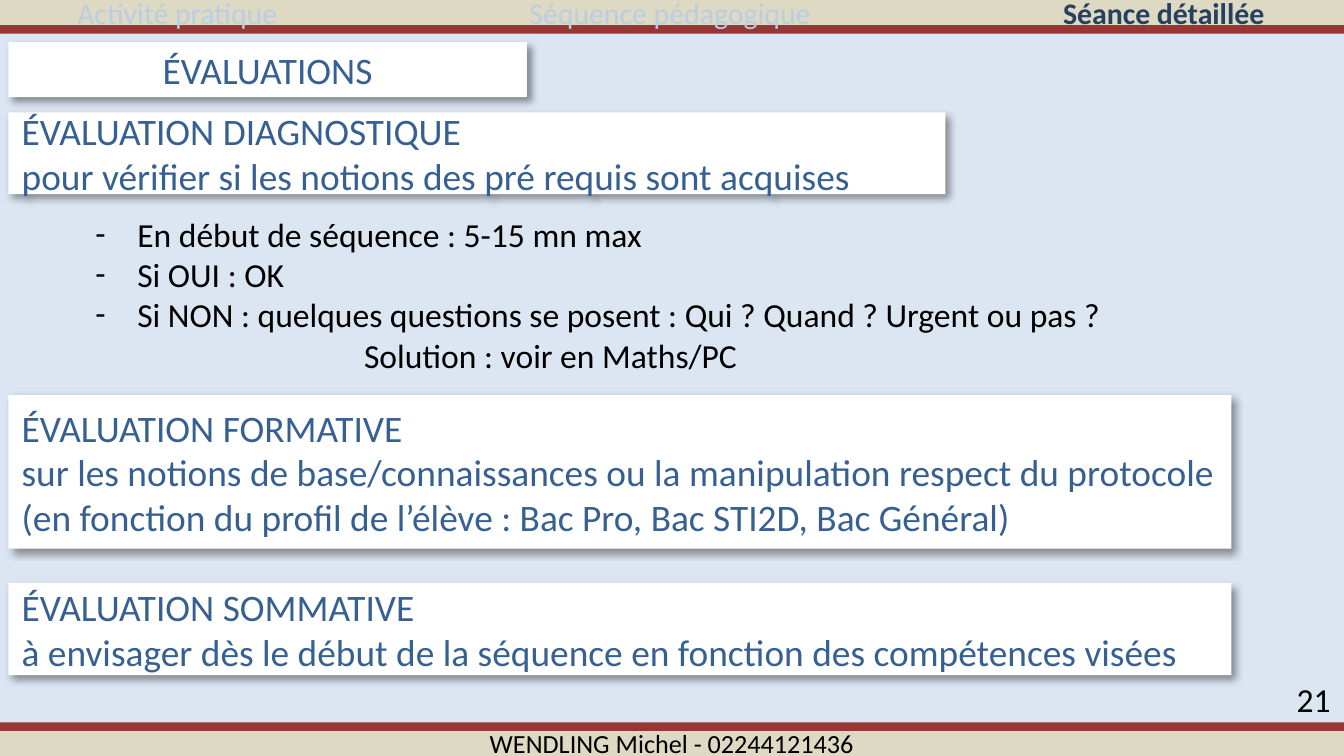
from dataclasses import dataclass

from lxml import etree
from pptx import Presentation
from pptx.dml.color import RGBColor
from pptx.enum import shapes, text
from pptx.oxml import ns
from pptx.util import Pt

WIDTH, HEIGHT = 720, 405
FONT = "Calibri"
SKY = RGBColor(0xDC, 0xE6, 0xF2)
SAND = RGBColor(0xDD, 0xD9, 0xC3)
BRICK = RGBColor(0x95, 0x37, 0x35)
WHITE = RGBColor(0xFF, 0xFF, 0xFF)
BLACK = RGBColor(0, 0, 0)
BLUE = RGBColor(0x37, 0x60, 0x92)
NAVY = RGBColor(0x25, 0x40, 0x61)
PALE_BLUE = RGBColor(0xB9, 0xCD, 0xE5)
LEFT, CENTER, RIGHT = text.PP_ALIGN.LEFT, text.PP_ALIGN.CENTER, text.PP_ALIGN.RIGHT
TOP, MIDDLE = text.MSO_ANCHOR.TOP, text.MSO_ANCHOR.MIDDLE


@dataclass(frozen=True)
class Box:
    left: float
    top: float
    width: float
    height: float

    def lengths(self) -> tuple:
        return tuple(Pt(v) for v in (self.left, self.top, self.width, self.height))


@dataclass(frozen=True)
class Band:
    top: float
    height: float
    color: RGBColor


@dataclass(frozen=True)
class Tab:
    label: str
    left: float
    width: float
    color: RGBColor = PALE_BLUE
    bold: bool = False


@dataclass(frozen=True)
class Card:
    box: Box
    lines: tuple


BANDS = (
    Band(0, 13.5, SAND),
    Band(391.5, 13.5, SAND),
    Band(13.5, 4.5, BRICK),
    Band(387, 4.5, BRICK),
)
TABS = (
    Tab("Séance détaillée", 527, 193, NAVY, True),
    Tab("Activité pratique", 0, 190),
    Tab("Séquence pédagogique", 245, 228),
)
CARD_LEFT = 4.5
TITLE_BOX = Box(CARD_LEFT, 22.5, 277.75, 29.5)
CARDS = (
    Card(Box(CARD_LEFT, 60.25, 502, 43.75), (
        "ÉVALUATION DIAGNOSTIQUE",
        "pour vérifier si les notions des pré requis sont acquises")),
    Card(Box(CARD_LEFT, 211.75, 655.25, 82.25), (
        "ÉVALUATION FORMATIVE",
        "sur les notions de base/connaissances ou la manipulation respect du protocole",
        "(en fonction du profil de l’élève : Bac Pro, Bac STI2D, Bac Général)")),
    Card(Box(CARD_LEFT, 312.25, 655.25, 49.5), (
        "ÉVALUATION SOMMATIVE",
        "à envisager dès le début de la séquence en fonction des compétences visées")),
)
STEPS = (
    "En début de séquence : 5-15 mn max",
    "Si OUI : OK",
    "Si NON : quelques questions se posent : Qui ? Quand ? Urgent ou pas ?",
)
SOLUTION = "Solution : voir en Maths/PC"


def write(sp, *lines: str, size: float, color: RGBColor = BLACK, align=LEFT,
          anchor=TOP, bold: bool = False) -> list:
    """Fill a shape with one paragraph per line and return the paragraphs."""
    tf = sp.text_frame
    tf.word_wrap = True
    tf.auto_size = text.MSO_AUTO_SIZE.NONE
    tf.vertical_anchor = anchor
    tf.margin_left = tf.margin_right = Pt(7.2)
    tf.margin_top = tf.margin_bottom = Pt(3.6)
    tf.text = "\n".join(lines)
    for p in tf.paragraphs:
        p.alignment = align
        for r in p.runs:
            r.font.name, r.font.size, r.font.bold = FONT, Pt(size), bold
            r.font.color.rgb = color
    return list(tf.paragraphs)


def indent(p, left: float, bullet: str = "", hanging: float = 0) -> None:
    pPr = p._p.get_or_add_pPr()
    pPr.set("marL", str(Pt(left)))
    pPr.set("indent", str(Pt(-hanging)))
    if bullet:
        etree.SubElement(pPr, ns.qn("a:buFont"), typeface=FONT)
        etree.SubElement(pPr, ns.qn("a:buChar"), char=bullet)


def paint(sp, color: RGBColor) -> None:
    """Give a plain fill with neither outline nor shadow."""
    sp.fill.solid()
    sp.fill.fore_color.rgb = color
    sp.line.fill.background()
    sp.shadow.inherit = False


def drop_shadow(sp) -> None:
    effects = sp._element.spPr.find(ns.qn("a:effectLst"))
    shadow = etree.SubElement(
        effects, ns.qn("a:outerShdw"), blurRad=str(Pt(4)), dist=str(Pt(3)),
        dir=str(45 * 60000), algn="tl", rotWithShape="0")
    tint = etree.SubElement(shadow, ns.qn("a:srgbClr"), val="000000")
    etree.SubElement(tint, ns.qn("a:alpha"), val="40000")


def add_rect(s, box: Box):
    return s.shapes.add_shape(shapes.MSO_SHAPE.RECTANGLE, *box.lengths())


def add_text(s, box: Box, *lines: str, **fmt) -> list:
    return write(s.shapes.add_textbox(*box.lengths()), *lines, **fmt)


def format_card(sp, *lines: str, align=LEFT) -> None:
    paint(sp, WHITE)
    drop_shadow(sp)
    write(sp, *lines, size=20, color=BLUE, align=align, anchor=MIDDLE)


def add_frame(s) -> None:
    """Draw the bands, navigation, page number and footer."""
    for band in BANDS:
        paint(add_rect(s, Box(0, band.top, WIDTH, band.height)), band.color)
    add_text(s, Box(659, 360, 61, 21.5), "21", size=18, align=RIGHT)
    for tab in TABS:
        add_text(s, Box(tab.left, -6.5, tab.width, 26.5), tab.label, size=16,
                 color=tab.color, bold=tab.bold, align=CENTER)
    add_text(s, Box(0, 386, WIDTH, 21.5), "WENDLING Michel - 02244121436",
             size=14, align=CENTER)


def main() -> None:
    prs = Presentation()
    prs.slide_width, prs.slide_height = Pt(WIDTH), Pt(HEIGHT)
    s = prs.slides.add_slide(prs.slide_layouts[5])
    s.background.fill.solid()
    s.background.fill.fore_color.rgb = SKY
    add_frame(s)

    title = s.shapes.title
    title.left, title.top, title.width, title.height = TITLE_BOX.lengths()
    format_card(title, "ÉVALUATIONS", align=CENTER)

    for card in CARDS:
        format_card(add_rect(s, card.box), *card.lines)

    *steps, solution = add_text(s, Box(44, 111, 676, 94.5), *STEPS, SOLUTION, size=18)
    for p in steps:
        indent(p, 22.5, bullet="-", hanging=22.5)
    indent(solution, 144)
    prs.save("out.pptx")


if __name__ == "__main__":
    main()
